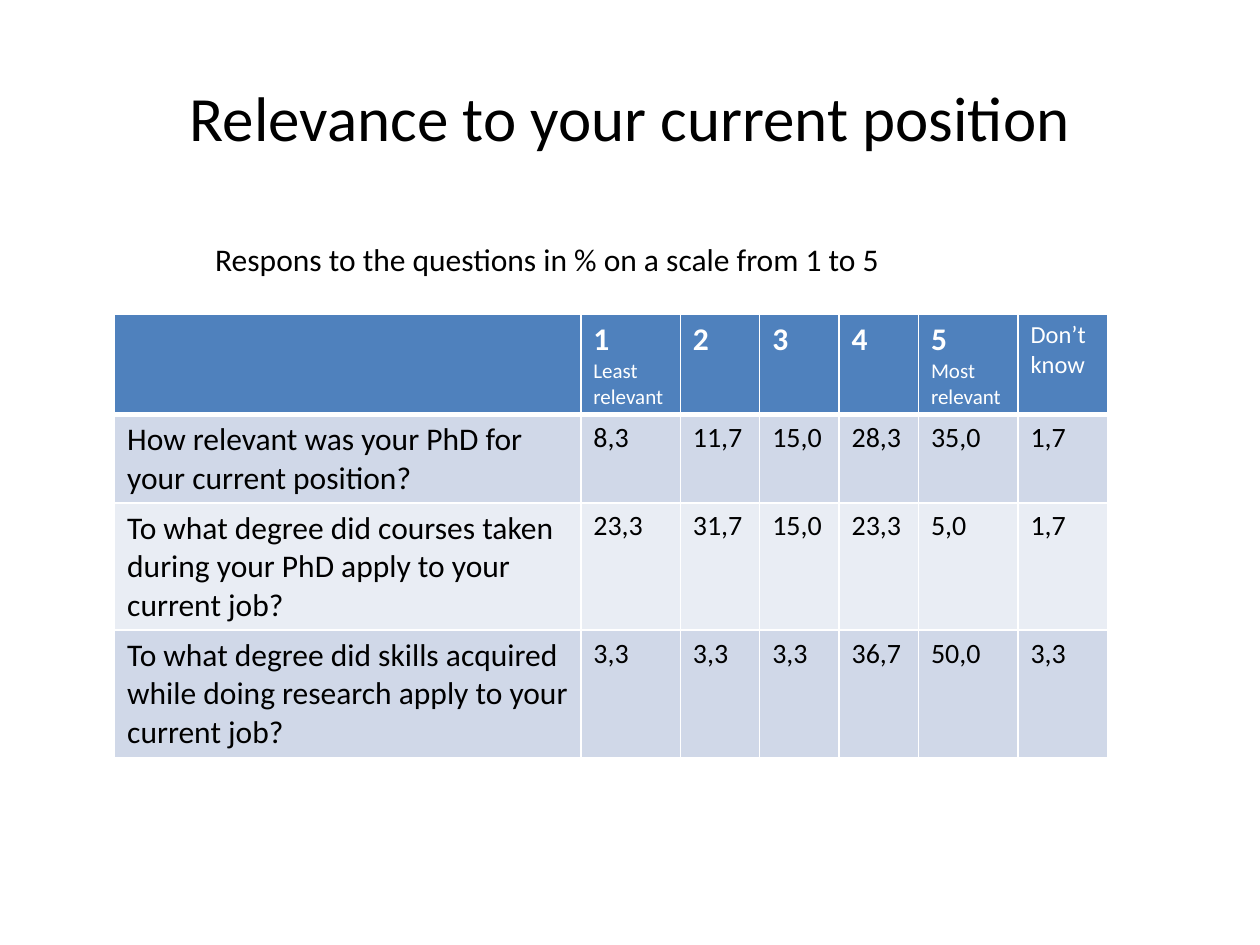
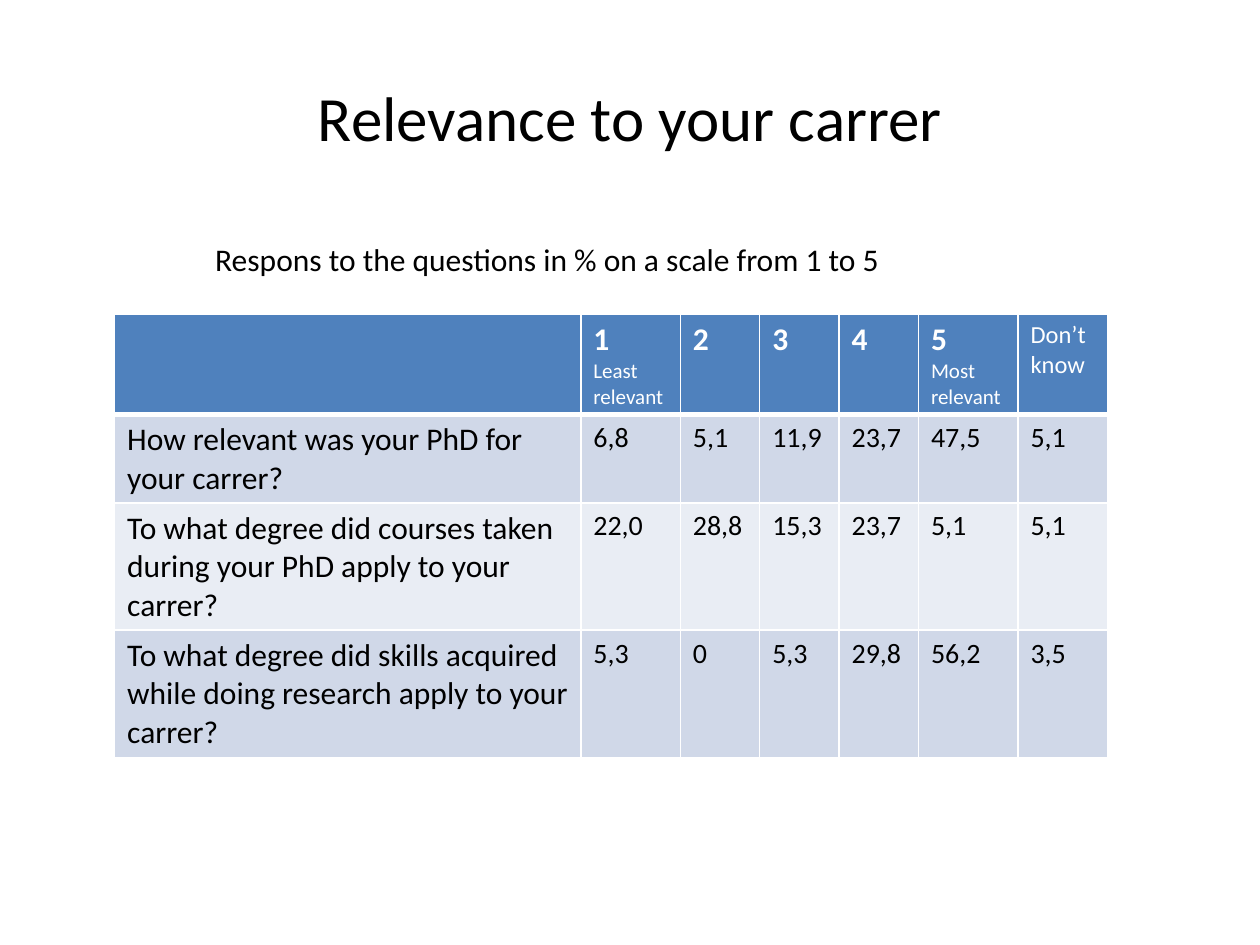
from dataclasses import dataclass

from lxml.etree import SubElement
from pptx import Presentation
from pptx.dml.color import RGBColor
from pptx.enum.text import MSO_ANCHOR, PP_ALIGN
from pptx.oxml.ns import qn
from pptx.slide import Slide
from pptx.util import Inches, Pt

COLORS = {
    "ink": "000000",
    "white": "FFFFFF",
    "head": "4F81BD",
    "odd": "D0D8E8",
    "even": "E9EDF4",
}
FONT = "Calibri"
WIDTH, HEIGHT = Inches(10), Inches(7.5)
COLS, ROWS = 100, 75  # page grid
WIDE = (37, 7.9, 6.3, 6.3, 6.3, 7.9, 7.1)  # table columns, in grid columns
TALL = (7.9, 7, 10.1, 10.1)  # table rows, in grid rows
NOTE = "Respons to the questions in % on a scale from 1 to 5"
ASKS = (
    "How relevant was your PhD for your {}?",
    "To what degree did courses taken during your PhD apply to your {}?",
    "To what degree did skills acquired while doing research apply to your {}?",
)


@dataclass(frozen=True)
class Run:
    text: str
    size: int
    color: str = "ink"
    bold: bool = False


@dataclass(frozen=True)
class Box:
    """A place on the page grid."""
    col: float
    row: float
    cols: float
    rows: float

    def frame(self) -> tuple[int, int, int, int]:
        return across(self.col), down(self.row), across(self.cols), down(self.rows)


@dataclass(frozen=True)
class Survey:
    title: str
    topics: tuple[str, str, str]  # what each question asks about
    marks: tuple[str, str, str]


def across(cols: float) -> int:
    return round(WIDTH * cols / COLS)


def down(rows: float) -> int:
    return round(HEIGHT * rows / ROWS)


def head(mark: str, label: str = "") -> list[Run]:
    runs = [Run(mark, 18, "white", True)]
    return runs + [Run(label, 12, "white")] if label else runs


TITLE = Box(5, 3, 90, 12.5)
HINT = Box(16.1, 18.6, 65.1, 4)
GRID = Box(9.1, 24.9, sum(WIDE), sum(TALL))
HEADS = [
    [],
    head("1", "Least relevant"),
    head("2"),
    head("3"),
    head("4"),
    head("5", "Most relevant"),
    [Run("Don’t know", 14, "white")],
]
SURVEYS = (
    Survey(
        "Relevance to your current position",
        ("current position", "current job", "current job"),
        (
            "8,3 11,7 15,0 28,3 35,0 1,7",
            "23,3 31,7 15,0 23,3 5,0 1,7",
            "3,3 3,3 3,3 36,7 50,0 3,3",
        ),
    ),
    Survey(
        "Relevance to your carrer",
        ("carrer",) * 3,
        (
            "6,8 5,1 11,9 23,7 47,5 5,1",
            "22,0 28,8 15,3 23,7 5,1 5,1",
            "5,3 0 5,3 29,8 56,2 3,5",
        ),
    ),
)


def write(frame, runs: list[Run], align: PP_ALIGN = PP_ALIGN.LEFT) -> None:
    """Put each run in a paragraph of its own."""
    for i, item in enumerate(runs):
        para = frame.add_paragraph() if i else frame.paragraphs[0]
        para.alignment = align
        run = para.add_run()
        run.text = item.text
        run.font.name = FONT
        run.font.size = Pt(item.size)
        run.font.bold = item.bold
        run.font.color.rgb = RGBColor.from_string(COLORS[item.color])


def add_text(slide: Slide, box: Box, run: Run, align: PP_ALIGN, anchor: MSO_ANCHOR) -> None:
    frame = slide.shapes.add_textbox(*box.frame()).text_frame
    frame.word_wrap = True
    frame.vertical_anchor = anchor
    write(frame, [run], align)


def edge(cell, top: int, base: int) -> None:
    """Draw white borders, with the given top and bottom widths in points."""
    props = cell._tc.get_or_add_tcPr()
    for side, size in (("L", 1), ("R", 1), ("T", top), ("B", base)):
        line = SubElement(props, qn(f"a:ln{side}"), w=str(Pt(size)))
        fill = SubElement(line, qn("a:solidFill"))
        SubElement(fill, qn("a:srgbClr"), val=COLORS["white"])


def add_grid(slide: Slide, survey: Survey) -> None:
    rows = [HEADS]
    for ask, topic, marks in zip(ASKS, survey.topics, survey.marks):
        query = [Run(ask.format(topic), 18)]
        rows.append([query] + [[Run(mark, 16)] for mark in marks.split()])

    table = slide.shapes.add_table(len(TALL), len(WIDE), *GRID.frame()).table
    table.horz_banding = False
    for col, cols in zip(table.columns, WIDE):
        col.width = across(cols)
    for i, (row, rise) in enumerate(zip(table.rows, TALL)):
        row.height = down(rise)
        tint = "head" if i == 0 else "odd" if i % 2 else "even"
        for cell, runs in zip(row.cells, rows[i]):
            edge(cell, top=3 if i == 1 else 1, base=3 if i == 0 else 1)
            cell.fill.solid()
            cell.fill.fore_color.rgb = RGBColor.from_string(COLORS[tint])
            write(cell.text_frame, runs)


def main() -> None:
    deck = Presentation()
    deck.slide_width, deck.slide_height = WIDTH, HEIGHT
    for survey in SURVEYS:
        slide = deck.slides.add_slide(deck.slide_layouts[6])
        add_text(slide, TITLE, Run(survey.title, 36), PP_ALIGN.CENTER, MSO_ANCHOR.MIDDLE)
        add_grid(slide, survey)
        add_text(slide, HINT, Run(NOTE, 18), PP_ALIGN.LEFT, MSO_ANCHOR.TOP)
    deck.save("out.pptx")


if __name__ == "__main__":
    main()
